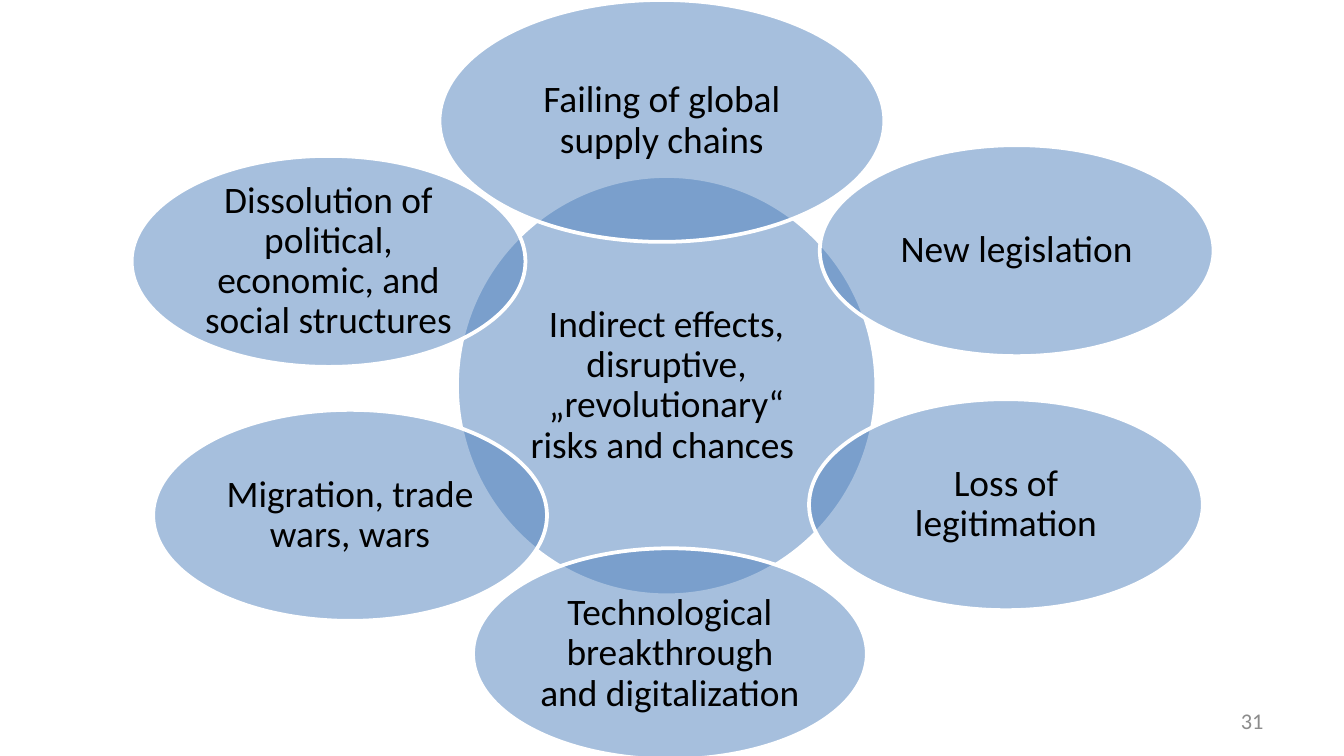
from dataclasses import dataclass

from lxml import etree
from pptx import Presentation
from pptx.dml.color import RGBColor
from pptx.enum.shapes import MSO_SHAPE
from pptx.enum.text import MSO_ANCHOR, PP_ALIGN
from pptx.oxml.ns import qn
from pptx.util import Inches, Pt

OVAL = MSO_SHAPE.OVAL
MIDDLE = MSO_ANCHOR.MIDDLE
CENTER, RIGHT = PP_ALIGN.CENTER, PP_ALIGN.RIGHT

FONT = "Calibri"
COLORS = {"bubble": "4F81BD", "outline": "FFFFFF", "text": "000000", "number": "8C8C8C"}
WIDTH = Inches(10)
HEIGHT = WIDTH * 9 // 16


@dataclass(frozen=True)
class Bubble:
    """Centre and size are percentages of the slide's width and height."""
    text: str
    cx: float
    cy: float
    w: float = 29.3
    h: float = 27.91


BUBBLES = [
    Bubble("Indirect effects, disruptive, „revolutionary“ risks and chances ",
           49.6, 51.02, 31.2, 55.47),
    Bubble("Failing of global supply chains", 49.25, 16, 33.1, 32),
    Bubble("New legislation", 75.65, 33.16),
    Bubble("Loss of legitimation", 74.85, 66.76),
    Bubble("Technological breakthrough and digitalization", 49.85, 86.49),
    Bubble("Migration, trade wars, wars", 26.05, 68.18),
    Bubble("Dissolution of political, economic, and social structures", 24.45, 34.58),
]


def share_x(percent: float) -> int:
    return round(WIDTH * percent / 100)


def share_y(percent: float) -> int:
    return round(HEIGHT * percent / 100)


def rgb(name: str) -> RGBColor:
    return RGBColor.from_string(COLORS[name])


def write(sp, text: str, size: int, color: str, align):
    """Set the shape's single paragraph and return it."""
    tf = sp.text_frame
    tf.word_wrap = True
    tf.vertical_anchor = MIDDLE
    tf.text = text
    p = tf.paragraphs[0]
    p.alignment = align
    font = p.runs[0].font
    font.name, font.size = FONT, Pt(size)
    font.color.rgb = rgb(color)
    return p


def set_opacity(sp, percent: int) -> None:
    color = sp.element.spPr.find(qn("a:solidFill"))[0]
    etree.SubElement(color, qn("a:alpha")).set("val", str(percent * 1000))


def draw_bubble(shapes, bubble: Bubble) -> None:
    sp = shapes.add_shape(OVAL, share_x(bubble.cx - bubble.w / 2),
                          share_y(bubble.cy - bubble.h / 2),
                          share_x(bubble.w), share_y(bubble.h))
    sp.shadow.inherit = False
    sp.fill.solid()
    sp.fill.fore_color.rgb = rgb("bubble")
    set_opacity(sp, 50)
    sp.line.color.rgb = rgb("outline")
    sp.line.width = Pt(2)
    tf = sp.text_frame
    tf.margin_left = tf.margin_right = tf.margin_top = tf.margin_bottom = Inches(0.03)
    p = write(sp, bubble.text, 20, "text", CENTER)
    p.line_spacing = 0.9


def draw_number(s, text: str) -> None:
    box = s.shapes.add_textbox(share_x(71.7), share_y(92.68), share_x(23.3), share_y(5.32))
    write(box, text, 12, "number", RIGHT)


def main() -> None:
    prs = Presentation()
    prs.slide_width, prs.slide_height = WIDTH, HEIGHT
    s = prs.slides.add_slide(prs.slide_layouts[6])
    draw_number(s, "31")
    group = s.shapes.add_group_shape()
    for bubble in BUBBLES:
        draw_bubble(group.shapes, bubble)
    prs.save("out.pptx")


if __name__ == "__main__":
    main()
